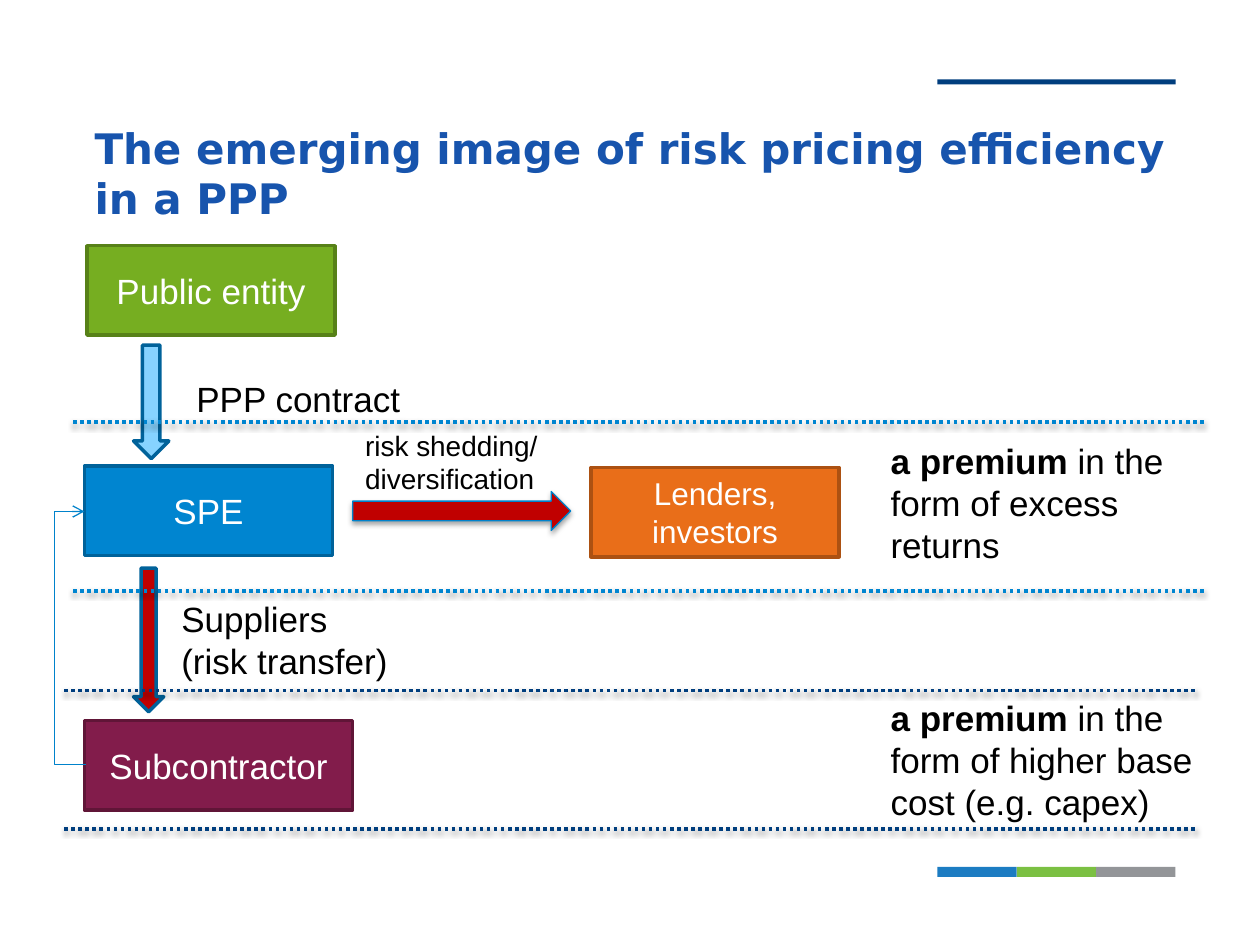
from collections import namedtuple

from lxml import etree
from pptx import Presentation, util as u
from pptx.dml.color import RGBColor
from pptx.enum import dml, shapes, text
from pptx.oxml import ns

NAVY = RGBColor(0x00, 0x3E, 0x7E)
TITLE_BLUE = RGBColor(0x17, 0x54, 0xAD)
BLUE = RGBColor(0x00, 0x85, 0xD0)
THIN_BLUE = RGBColor(0x00, 0x82, 0xCB)
DARK_BLUE = RGBColor(0x00, 0x62, 0x9A)
LIGHT_BLUE = RGBColor(0x86, 0xD3, 0xFF)
GREEN = RGBColor(0x76, 0xAE, 0x21)
DARK_GREEN = RGBColor(0x57, 0x81, 0x18)
ORANGE = RGBColor(0xE9, 0x6E, 0x19)
DARK_ORANGE = RGBColor(0xAC, 0x51, 0x12)
PLUM = RGBColor(0x82, 0x1C, 0x4B)
DARK_PLUM = RGBColor(0x60, 0x15, 0x37)
RED = RGBColor(0xC0, 0x00, 0x00)
FOOTER_COLOURS = (RGBColor(0x1C, 0x7C, 0xC2), RGBColor(0x7B, 0xC0, 0x42), RGBColor(0x93, 0x95, 0x98))
WHITE = RGBColor(0xFF, 0xFF, 0xFF)
BLACK = RGBColor(0x00, 0x00, 0x00)

COLUMNS, ROWS = 100, 75
WIDTH, HEIGHT = u.Inches(10), u.Inches(7.5)
SHAPE = shapes.MSO_SHAPE
Box = namedtuple("Box", "left top width height")


def inside(box, left, top, width=0, height=0):
    """Return a box placed by columns and rows from the corner of another."""
    return Box(box.left + left, box.top + top, width, height)


def lengths(box):
    """Turn columns and rows into slide lengths."""
    across, down = WIDTH / COLUMNS, HEIGHT / ROWS
    return [round(value * unit) for value, unit in zip(box, (across, down) * 2)]


def add_shadow(shape, opacity, distance):
    """Give a shape or connector a soft shadow below it."""
    effects = etree.SubElement(shape._element.spPr, ns.qn("a:effectLst"))
    shadow = etree.SubElement(effects, ns.qn("a:outerShdw"), blurRad=str(u.Pt(3.1)),
                              dist=str(u.Pt(distance)), dir="5400000", rotWithShape="0")
    colour = etree.SubElement(shadow, ns.qn("a:srgbClr"), val="000000")
    etree.SubElement(colour, ns.qn("a:alpha"), val=str(opacity * 1000))


def write(shape, runs, size, colour=BLACK, font="Arial", align=None, frame_format=None):
    """Write runs of (words, bold) into a shape."""
    frame = shape.text_frame
    frame.word_wrap = True
    for name, value in (frame_format or {}).items():
        setattr(frame, name, value)
    paragraph = frame.paragraphs[0]
    paragraph.alignment = align
    for words, bold in runs:
        for index, line in enumerate(words.split("\n")):
            if index:
                paragraph.add_line_break()
            run = paragraph.add_run()
            run.text = line
            values = {"size": u.Pt(size), "name": font, "bold": bold}
            for name, value in values.items():
                setattr(run.font, name, value)
            run.font.color.rgb = colour


def add_block(slide, box, fill, line=None, weight=2, kind=SHAPE.RECTANGLE, shadow=True):
    """Add a filled preset shape, outlined if a line colour is given."""
    shape = slide.shapes.add_shape(kind, *lengths(box))
    if shadow:
        shape.shadow.inherit = False
    shape.fill.solid()
    shape.fill.fore_color.rgb = fill
    if line is None:
        shape.line.fill.background()
    else:
        shape.line.color.rgb = line
        shape.line.width = u.Pt(weight)
    return shape


def add_label(slide, box, runs, size=20, **options):
    """Add a wrapped text box."""
    write(slide.shapes.add_textbox(*lengths(box)), runs, size, **options)


def add_line(slide, kind, start, end, colour, weight):
    """Add a connector between two points of the grid."""
    points = lengths((*start, *end))
    connector = slide.shapes.add_connector(kind, *points)
    connector.line.color.rgb = colour
    connector.line.width = u.Pt(weight)
    return connector


def add_header(slide, box):
    """Place the short rule and the title."""
    add_block(slide, inside(box, 66.9, 0, 18.9, 0.4), NAVY)
    margins = dict.fromkeys(("margin_left", "margin_right", "margin_top"), 0)
    margins.update(margin_bottom=u.Inches(0.08), vertical_anchor=text.MSO_ANCHOR.BOTTOM)
    add_label(slide, inside(box, 0, 2.1, box.width, 10.1),
              [("The emerging image of risk pricing efficiency in a PPP", True)], 24,
              colour=TITLE_BLUE, font="DejaVu Sans", frame_format=margins)


def add_footer(slide, box):
    """Place equal colour bars side by side."""
    bar = box.width / len(FOOTER_COLOURS)
    for index, colour in enumerate(FOOTER_COLOURS):
        add_block(slide, inside(box, index * bar, 0, bar, box.height), colour)


def add_party(slide, box, name, fill, line, size=20, side_margin=0.1):
    """Place one named party of the contract chain."""
    shape = add_block(slide, box, fill, line)
    margin = u.Inches(side_margin)
    write(shape, [(name, None)], size, WHITE, align=text.PP_ALIGN.CENTER,
          frame_format={"margin_left": margin, "margin_right": margin,
                        "vertical_anchor": text.MSO_ANCHOR.MIDDLE})


def add_feedback(slide, start, end, reach):
    """Place the bent arrow that runs out to the left and back."""
    connector = add_line(slide, shapes.MSO_CONNECTOR.ELBOW, start, end, THIN_BLUE, 0.75)
    etree.SubElement(connector._element.spPr, ns.qn("a:effectLst"))
    geometry = connector._element.spPr.find(ns.qn("a:prstGeom"))
    adjustments = geometry.find(ns.qn("a:avLst"))
    if adjustments is None:
        adjustments = etree.SubElement(geometry, ns.qn("a:avLst"))
    share = round(reach / (start[0] - end[0]) * 100000)
    etree.SubElement(adjustments, ns.qn("a:gd"), name="adj1", fmla=f"val {share}")
    etree.SubElement(connector.line._get_or_add_ln(), ns.qn("a:tailEnd"), type="arrow")


def add_chain(slide, box):
    """Place the parties, the arrows between them and their labels."""
    add_party(slide, inside(box, 2.4, 17.5, 19.7, 7.1), "SPE", BLUE, DARK_BLUE)
    add_party(slide, inside(box, 2.4, 37.7, 21.3, 7.1), "Subcontractor", PLUM, DARK_PLUM,
              side_margin=0)
    add_block(slide, inside(box, 6.3, 25.6, 2.4, 11.4), RED, DARK_BLUE, kind=SHAPE.DOWN_ARROW)
    add_feedback(slide, inside(box, 2.5, 41.2)[:2], inside(box, 2.4, 21.1)[:2], 2.5)
    add_label(slide, inside(box, 9.1, 27.4, 29.5, 7.7), [("Suppliers \n(risk transfer)", None)])
    add_party(slide, inside(box, 2.6, 0, 19.7, 7.1), "Public entity", GREEN, DARK_GREEN)
    add_block(slide, inside(box, 6.3, 7.9, 2.8, 9), LIGHT_BLUE, DARK_BLUE, kind=SHAPE.DOWN_ARROW)
    add_label(slide, inside(box, 10.3, 10, 39.4, 4.4), [("PPP contract", None)])
    add_label(slide, inside(box, 23.7, 14, 17.3, 6.4),
              [("risk shedding/\ndiversification", None)], 16)
    shedding = add_block(slide, inside(box, 23.7, 19.5, 17.3, 3.1), RED, THIN_BLUE, 0.75,
                         SHAPE.RIGHT_ARROW, shadow=False)
    add_shadow(shedding, 35, 1.8)
    add_party(slide, inside(box, 42.6, 17.6, 19.7, 7.1), "Lenders, investors",
              ORANGE, DARK_ORANGE, size=18)


def add_premium_band(slide, box, colour, note, note_box):
    """Place dotted lines above and below a band, with its premium note."""
    for top in (box.top, box.top + box.height):
        line = add_line(slide, shapes.MSO_CONNECTOR.STRAIGHT, (box.left, top),
                        (box.left + box.width, top), colour, 2)
        line.line.dash_style = dml.MSO_LINE.ROUND_DOT
        add_shadow(line, 38, 1.6)
    add_label(slide, inside(box, *note_box), [("a premium ", True), (note, False)])


def main():
    """Build and save the slide."""
    presentation = Presentation()
    presentation.slide_width, presentation.slide_height = WIDTH, HEIGHT
    slide = presentation.slides.add_slide(presentation.slide_layouts[6])
    add_header(slide, Box(7.5, 6.3, 85.9, 12.2))
    add_footer(slide, Box(74.4, 68.8, 18.9, 0.8))
    add_chain(slide, Box(4.3, 19.5, 62.3, 44.8))
    add_premium_band(slide, Box(5.8, 33.5, 89.9, 13.4), BLUE,
                     "in the form of excess returns", (63.9, 0.9, 24.4, 11.1))
    add_premium_band(slide, Box(5.1, 54.8, 89.8, 11), NAVY,
                     "in the form of higher base cost (e.g. capex)", (64.6, 0, 26, 11.1))
    presentation.save("out.pptx")


if __name__ == "__main__":
    main()
